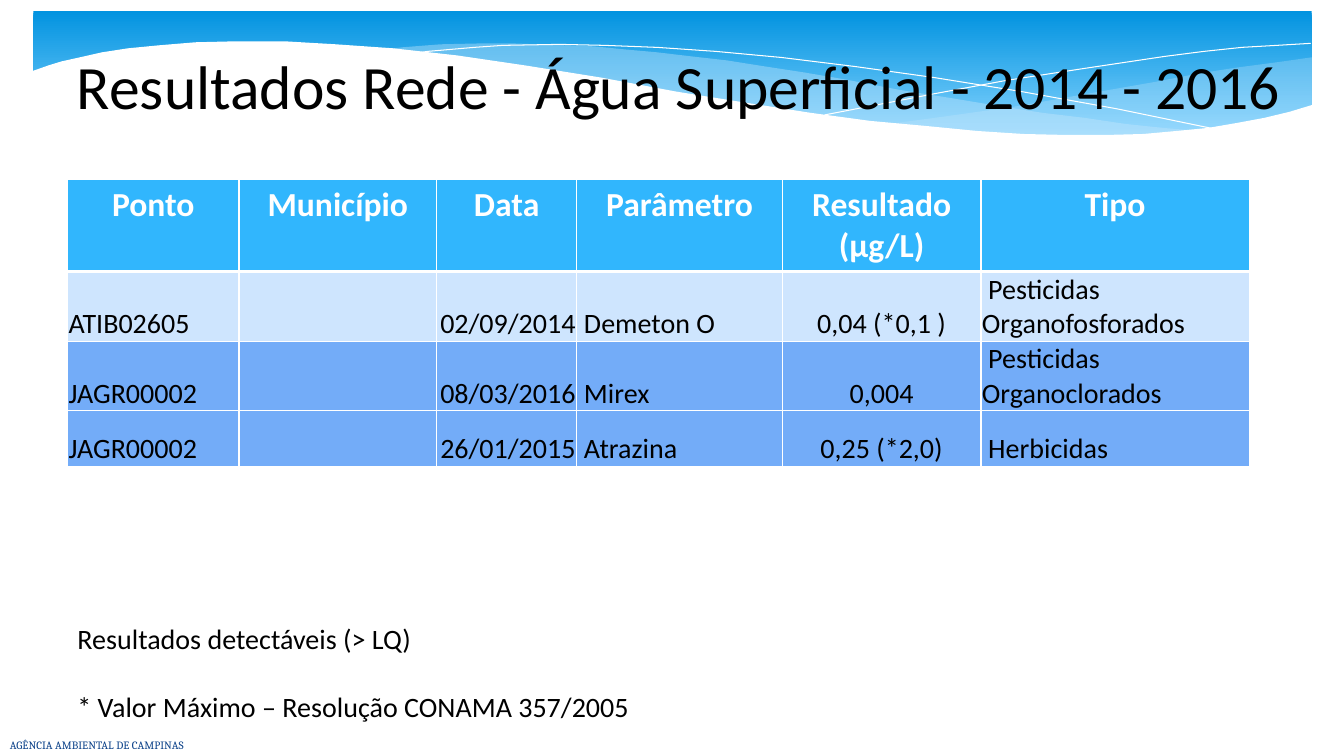
from dataclasses import dataclass

from lxml import etree
from pptx import Presentation
from pptx import util as u
from pptx.dml import color
from pptx.enum import shapes, text
from pptx.oxml import ns

PX = 9144
LEFT, CENTER, RIGHT = text.PP_ALIGN.LEFT, text.PP_ALIGN.CENTER, text.PP_ALIGN.RIGHT

RIGHT_SWELL = [
    (1300, 57), (1265, 62), (1227, 67), (1188, 73), (1147, 81), (1073, 94), (1005, 106),
    (941, 115), (882, 123), (921, 127), (958, 130), (993, 132), (1025, 134), (1056, 135),
    (1099, 135), (1138, 133), (1174, 131), (1207, 126), (1238, 121), (1266, 115),
    (1301, 105), (1301, 57)]
MIDDLE_SWELL = [
    (1190, 130), (1154, 127), (1116, 123), (1076, 117), (1034, 112), (989, 105), (941, 97),
    (891, 89), (839, 79), (798, 72), (759, 66), (721, 60), (686, 56), (652, 52), (619, 49),
    (589, 46), (560, 45), (532, 44), (506, 43), (482, 43), (437, 44), (399, 47), (382, 49),
    (431, 54), (483, 60), (539, 69), (599, 79), (654, 89), (706, 98), (755, 106), (802, 113),
    (846, 119), (887, 124), (926, 128), (963, 131), (998, 133), (1030, 135), (1061, 136),
    (1104, 136), (1143, 134), (1167, 132)]
FALLING_LINE = [
    (412, 53), (424, 51), (447, 49), (470, 47), (499, 45), (555, 44), (600, 45), (652, 47),
    (710, 51), (775, 57), (848, 66), (927, 77), (1014, 91), (1108, 108), (1210, 129)]
RISING_LINE = [
    (818, 114), (870, 104), (927, 93), (997, 80), (1075, 68), (1155, 56), (1194, 51),
    (1232, 47), (1267, 45), (1300, 43)]
WHITE_WAVE = [
    (1302, 104), (1279, 111), (1254, 117), (1227, 122), (1198, 127), (1167, 130), (1134, 133),
    (1097, 134), (1058, 134), (1015, 133), (969, 130), (918, 125), (863, 120), (804, 112),
    (740, 102), (671, 91), (596, 77), (521, 65), (453, 55), (390, 48), (333, 44), (282, 41),
    (235, 41), (194, 42), (158, 45), (127, 48), (101, 52), (79, 57), (61, 61), (48, 65),
    (31, 71), (31, 187), (1303, 187), (1303, 103)]

COLUMNS = [170, 196, 139, 204, 197, 266]
ROWS = [67, 67, 55, 55]
ALIGNMENTS = [LEFT, LEFT, RIGHT, LEFT, CENTER, LEFT]
RESULTS = [
    ["Ponto", "Município", "Data", "Parâmetro", "Resultado (µg/L)", "Tipo"],
    ["ATIB02605", "", "02/09/2014", " Demeton O", "0,04 (*0,1 )", " Pesticidas Organofosforados"],
    ["JAGR00002", "", "08/03/2016", " Mirex", "0,004", " Pesticidas Organoclorados"],
    ["JAGR00002", "", "26/01/2015", " Atrazina", "0,25 (*2,0)", " Herbicidas"]]


@dataclass(frozen=True)
class Theme:
    """Colours, fonts and type sizes of the slide."""
    white: str = "FFFFFF"
    ink: str = "000000"
    agency: str = "073E87"
    sky_top: str = "0293E0"
    sky_bottom: str = "83D3FE"
    swell: str = "C6E7FC"
    header: str = "31B6FD"
    light_row: str = "CEE5FE"
    strong_row: str = "73ACF8"
    font: str = "Calibri"
    agency_font: str = "Cambria"
    title_size: int = 44
    header_size: int = 24
    body_size: int = 20
    agency_size: int = 8


class Slide:
    """Draws styled elements on one page, in px."""

    def __init__(self, page, theme):
        self.page, self.theme = page, theme

    def rgb(self, value):
        """Turn a hex value into a colour."""
        return color.RGBColor.from_string(value)

    def add_span(self, para, words, size, ink=None, font=None, bold=False, align=LEFT):
        """Add one formatted run to a paragraph."""
        para.alignment = align
        span = para.add_run()
        span.text = words
        span.font.name = font or self.theme.font
        span.font.size = u.Pt(size)
        span.font.bold = bold
        span.font.color.rgb = self.rgb(ink or self.theme.ink)

    def band(self, left, top, width, height):
        """Draw the gradient band of the header."""
        band = self.page.shapes.add_shape(
            shapes.MSO_SHAPE.ROUNDED_RECTANGLE, *(v * PX for v in (left, top, width, height)))
        band.adjustments[0] = 0
        band.shadow.inherit = False
        band.line.fill.background()
        band.fill.gradient()
        band.fill.gradient_angle = 270
        stops = ((0, self.theme.sky_top), (0.9, self.theme.sky_bottom))
        for stop, (position, tint) in zip(band.fill.gradient_stops, stops):
            stop.position = position
            stop.color.rgb = self.rgb(tint)

    def outline(self, points, closed):
        """Build a freeform without shadow through the points."""
        builder = self.page.shapes.build_freeform(*points[0], scale=PX)
        builder.add_line_segments(points[1:], close=closed)
        shape = builder.convert_to_shape()
        shape.shadow.inherit = False
        return shape

    def wave(self, points, tint, opacity=100):
        """Draw a filled wave."""
        shape = self.outline(points, True)
        shape.line.fill.background()
        shape.fill.solid()
        shape.fill.fore_color.rgb = self.rgb(tint)
        if opacity < 100:
            paint = shape._element.spPr.find(".//" + ns.qn("a:srgbClr"))
            etree.SubElement(paint, ns.qn("a:alpha"), val=str(opacity * 1000))

    def curve(self, points):
        """Draw a white hairline."""
        shape = self.outline(points, False)
        shape.fill.background()
        shape.line.color.rgb = self.rgb(self.theme.white)
        shape.line.width = 0

    def title(self, words, left, top, width, height):
        """Place the title in front of the header."""
        box = self.page.shapes.title
        box.left, box.top, box.width, box.height = (v * PX for v in (left, top, width, height))
        self.page.shapes._spTree.append(box._element)
        frame = box.text_frame
        frame.auto_size = text.MSO_AUTO_SIZE.NONE
        frame.vertical_anchor = text.MSO_ANCHOR.MIDDLE
        self.add_span(frame.paragraphs[0], words, self.theme.title_size, align=CENTER)

    def label(self, lines, left, top, width, height, size, ink=None, font=None,
              anchor=text.MSO_ANCHOR.TOP, gap=0):
        """Add a text box with one paragraph per line."""
        box = self.page.shapes.add_textbox(*(v * PX for v in (left, top, width, height)))
        frame = box.text_frame
        frame.word_wrap = True
        frame.vertical_anchor = anchor
        for index, line in enumerate(lines):
            para = frame.add_paragraph() if index else frame.paragraphs[0]
            if index:
                para.space_before = u.Pt(gap)
            self.add_span(para, line, size, ink, font)

    def borders(self, cell, top, bottom):
        """Give a cell white borders, widths in points."""
        for index, (side, width) in enumerate((("L", 1), ("R", 1), ("T", top), ("B", bottom))):
            line = etree.Element(ns.qn("a:ln" + side), w=str(u.Pt(width)))
            paint = etree.SubElement(line, ns.qn("a:solidFill"))
            etree.SubElement(paint, ns.qn("a:srgbClr"), val=self.theme.white)
            cell._tc.get_or_add_tcPr().insert(index, line)

    def table(self, data, left, top):
        """Add the results table."""
        theme = self.theme
        frame = self.page.shapes.add_table(
            len(ROWS), len(COLUMNS), left * PX, top * PX, sum(COLUMNS) * PX, sum(ROWS) * PX)
        table = frame.table
        table.horz_banding = False
        for column, width in zip(table.columns, COLUMNS):
            column.width = width * PX
        fills = (theme.header, theme.light_row, theme.strong_row, theme.strong_row)
        for r, (row, height) in enumerate(zip(table.rows, ROWS)):
            row.height = height * PX
            for c, cell in enumerate(row.cells):
                cell.fill.solid()
                cell.fill.fore_color.rgb = self.rgb(fills[r])
                self.borders(cell, 3 if r == 1 else 1, 3 if r == 0 else 1)
                para = cell.text_frame.paragraphs[0]
                if r == 0:
                    self.add_span(para, data[r][c], theme.header_size, theme.white,
                                  bold=True, align=CENTER)
                elif data[r][c]:
                    cell.vertical_anchor = text.MSO_ANCHOR.BOTTOM
                    cell.margin_left = cell.margin_right = cell.margin_top = PX
                    cell.margin_bottom = 0
                    self.add_span(para, data[r][c], theme.body_size, align=ALIGNMENTS[c])


def main():
    """Build and save the slide."""
    deck = Presentation()
    deck.slide_width, deck.slide_height = 1333 * PX, 750 * PX
    theme = Theme()
    slide = Slide(deck.slides.add_slide(deck.slide_layouts[5]), theme)
    slide.band(33, 11, 1268, 136)
    slide.wave(RIGHT_SWELL, theme.swell, 29)
    slide.wave(MIDDLE_SWELL, theme.swell, 40)
    slide.curve(FALLING_LINE)
    slide.curve(RISING_LINE)
    slide.wave(WHITE_WAVE, theme.white)
    slide.label(["AGÊNCIA AMBIENTAL DE CAMPINAS"], 0, 719, 552, 40, theme.agency_size,
                theme.agency, theme.agency_font, text.MSO_ANCHOR.MIDDLE)
    slide.title("Resultados Rede - Água Superficial - 2014 - 2016", 26, 12, 1296, 145)
    slide.table(RESULTS, 67, 178)
    slide.label(["Resultados detectáveis (> LQ)", "* Valor Máximo – Resolução CONAMA 357/2005"],
                67, 612, 676, 111, theme.body_size, gap=24)
    deck.save("out.pptx")


if __name__ == "__main__":
    main()
